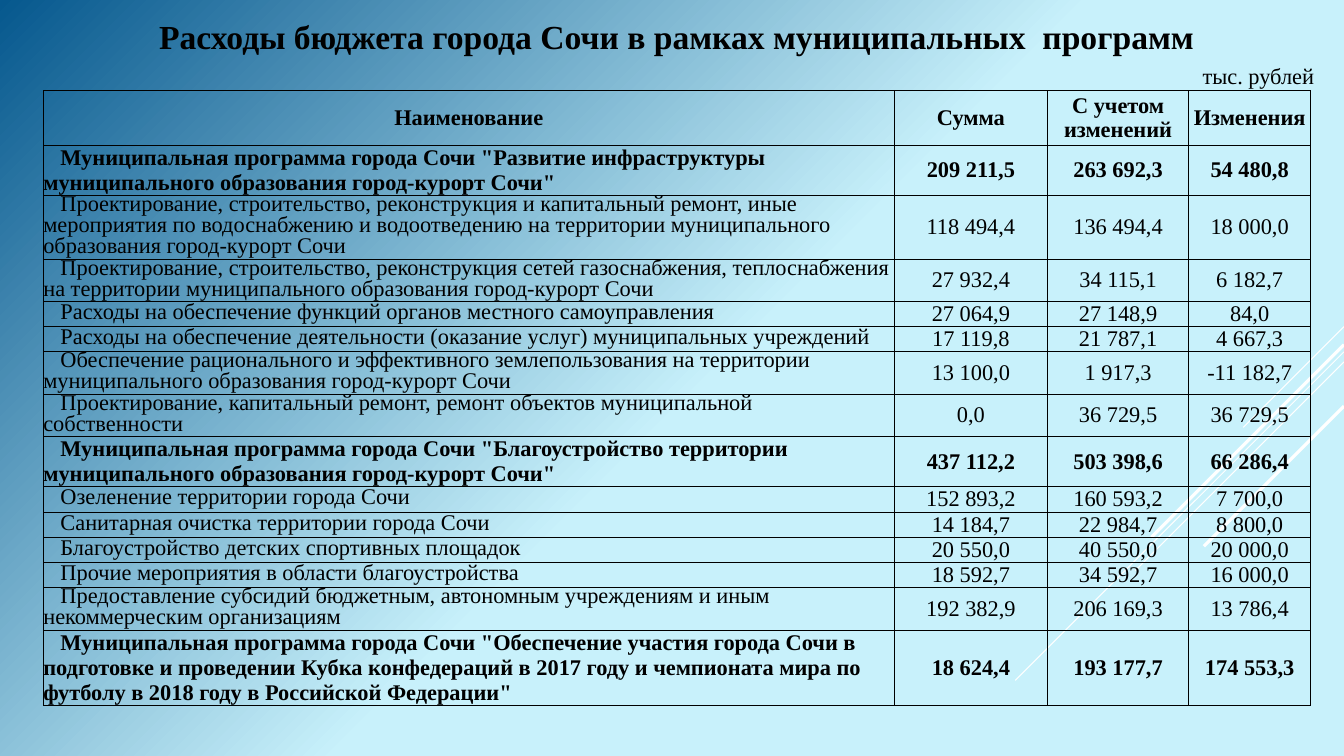
from lxml import etree
from pptx import Presentation
from pptx.dml.color import RGBColor as Rgb
from pptx.enum.shapes import MSO_CONNECTOR as Conn
from pptx.enum.text import MSO_ANCHOR as Anchor, PP_ALIGN as Align
from pptx.oxml import parse_xml
from pptx.oxml.ns import nsdecls, qn
from pptx.util import Inches, Pt

COLORS = {"ink": "000000", "ray": "FFFFFF", "pale": "C8F1FB", "deep": "06588E"}
FONT = "Times New Roman"
WIDTH, HEIGHT = 13.33, 7.5
COLS = [8.44, 1.52, 1.4, 1.21]
HEAD = ["Наименование", "Сумма", "С учетом изменений", "Изменения"]

# height, bold, name, amounts
ROWS = [
    (0.5, True, 'Муниципальная программа города Сочи "Развитие инфраструктуры '
     'муниципального образования город-курорт Сочи"',
     ["209 211,5", "263 692,3", "54 480,8"]),
    (0.63, False, "Проектирование, строительство, реконструкция и капитальный ремонт, "
     "иные мероприятия по водоснабжению и водоотведению на территории "
     "муниципального образования город-курорт Сочи",
     ["118 494,4", "136 494,4", "18 000,0"]),
    (0.42, False, "Проектирование, строительство, реконструкция сетей газоснабжения, "
     "теплоснабжения на территории муниципального образования город-курорт Сочи",
     ["27 932,4", "34 115,1", "6 182,7"]),
    (0.25, False, "Расходы на обеспечение функций органов местного самоуправления",
     ["27 064,9", "27 148,9", "84,0"]),
    (0.25, False, "Расходы на обеспечение деятельности (оказание услуг) "
     "муниципальных учреждений",
     ["17 119,8", "21 787,1", "4 667,3"]),
    (0.42, False, "Обеспечение рационального и эффективного землепользования на "
     "территории муниципального образования город-курорт Сочи",
     ["13 100,0", "1 917,3", "-11 182,7"]),
    (0.42, False, "Проектирование, капитальный ремонт, ремонт объектов "
     "муниципальной собственности",
     ["0,0", "36 729,5", "36 729,5"]),
    (0.5, True, 'Муниципальная программа города Сочи "Благоустройство территории '
     'муниципального образования город-курорт Сочи"',
     ["437 112,2", "503 398,6", "66 286,4"]),
    (0.25, False, "Озеленение территории города Сочи",
     ["152 893,2", "160 593,2", "7 700,0"]),
    (0.25, False, "Санитарная очистка территории города Сочи",
     ["14 184,7", "22 984,7", "8 800,0"]),
    (0.25, False, "Благоустройство детских спортивных площадок",
     ["20 550,0", "40 550,0", "20 000,0"]),
    (0.25, False, "Прочие мероприятия в области благоустройства",
     ["18 592,7", "34 592,7", "16 000,0"]),
    (0.42, False, "Предоставление субсидий бюджетным, автономным учреждениям и иным "
     "некоммерческим организациям",
     ["192 382,9", "206 169,3", "13 786,4"]),
    (0.75, True, 'Муниципальная программа города Сочи "Обеспечение участия города '
     "Сочи в подготовке и проведении Кубка конфедераций в 2017 году и чемпионата "
     'мира по футболу в 2018 году в Российской Федерации"',
     ["18 624,4", "193 177,7", "174 553,3"]),
]


def write(frame, text, size=16, bold=False, align=Align.LEFT, lead=None, indent=0):
    par = frame.paragraphs[0]
    par.alignment = align
    if lead:
        par.line_spacing = Pt(lead)
    if indent:
        props = par._p.get_or_add_pPr()
        props.set("marL", "0")
        props.set("indent", str(Inches(indent)))
    run = par.add_run()
    run.text = text
    font = run.font
    font.name, font.size, font.bold = FONT, Pt(size), bold
    font.color.rgb = Rgb.from_string(COLORS["ink"])


def add_text(slide, box, text, **style):
    frame = slide.shapes.add_textbox(*map(Inches, box)).text_frame
    frame.word_wrap = True
    write(frame, text, **style)


def paint(slide):
    """Fill the background with a round gradient from the lower right corner."""
    fill = slide.background.fill
    fill.gradient()
    for stop, name, pos in zip(fill.gradient_stops, ("pale", "deep"), (0.48, 1)):
        stop.color.rgb = Rgb.from_string(COLORS[name])
        stop.position = pos
    line = next(slide.element.iter(qn("a:lin")))
    line.getparent().replace(line, parse_xml(
        f'<a:path {nsdecls("a")} path="circle">'
        '<a:fillToRect l="100000" t="100000"/></a:path>'))


def add_rays(slide, right):
    """Draw diagonal lines that run down and left from the given edge."""
    for top, reach, weight in [(3.24, 1, 0.75), (3.49, 3.26, 0.75),
                               (3.59, 2.07, 0.75), (3.42, 1.91, 2.25),
                               (4.03, 1.39, 2.25)]:
        ends = map(Inches, (right, top, right - reach, top + reach))
        ray = slide.shapes.add_connector(Conn.STRAIGHT, *ends)
        ray.line.color.rgb = Rgb.from_string(COLORS["ray"])
        ray.line.width = Pt(weight)
        etree.SubElement(ray._element.spPr, qn("a:effectLst"))


def set_cell(cell, text, **style):
    cell.margin_left = cell.margin_right = cell.margin_top = cell.margin_bottom = 0
    cell.vertical_anchor = Anchor.MIDDLE
    cell.fill.background()
    props = cell._tc.get_or_add_tcPr()
    for spot, side in enumerate(("lnL", "lnR", "lnT", "lnB")):
        props.insert(spot, parse_xml(
            f'<a:{side} {nsdecls("a")} w="{Pt(0.5)}"><a:solidFill>'
            f'<a:srgbClr val="{COLORS["ink"]}"/></a:solidFill></a:{side}>'))
    write(cell.text_frame, text, **style)


def add_budget(slide, box):
    shape = slide.shapes.add_table(len(ROWS) + 1, len(COLS), *map(Inches, box))
    table = shape.table
    table.first_row = table.horz_banding = False
    for col, width in zip(table.columns, COLS):
        col.width = Inches(width)
    table.rows[0].height = Inches(0.54)
    for c, label in enumerate(HEAD):
        set_cell(table.cell(0, c), label, bold=True, align=Align.CENTER)
    for r, (height, bold, name, sums) in enumerate(ROWS, 1):
        table.rows[r].height = Inches(height)
        set_cell(table.cell(r, 0), name, bold=bold, indent=0.17,
                 lead=None if bold else 15)
        for c, value in enumerate(sums, 1):
            set_cell(table.cell(r, c), value, bold=bold, align=Align.CENTER)


def main():
    deck = Presentation()
    deck.slide_width, deck.slide_height = Inches(WIDTH), Inches(HEIGHT)
    slide = deck.slides.add_slide(deck.slide_layouts[6])
    paint(slide)
    add_rays(slide, WIDTH)
    add_budget(slide, (0.43, 0.9, sum(COLS), 6.1))
    add_text(slide, (0.79, 0.11, 11.84, 0.5),
             "Расходы бюджета города Сочи в рамках муниципальных  программ",
             size=24, bold=True, align=Align.CENTER)
    add_text(slide, (11.83, 0.57, 1.5, 0.37), "тыс. рублей")
    deck.save("out.pptx")


if __name__ == "__main__":
    main()
